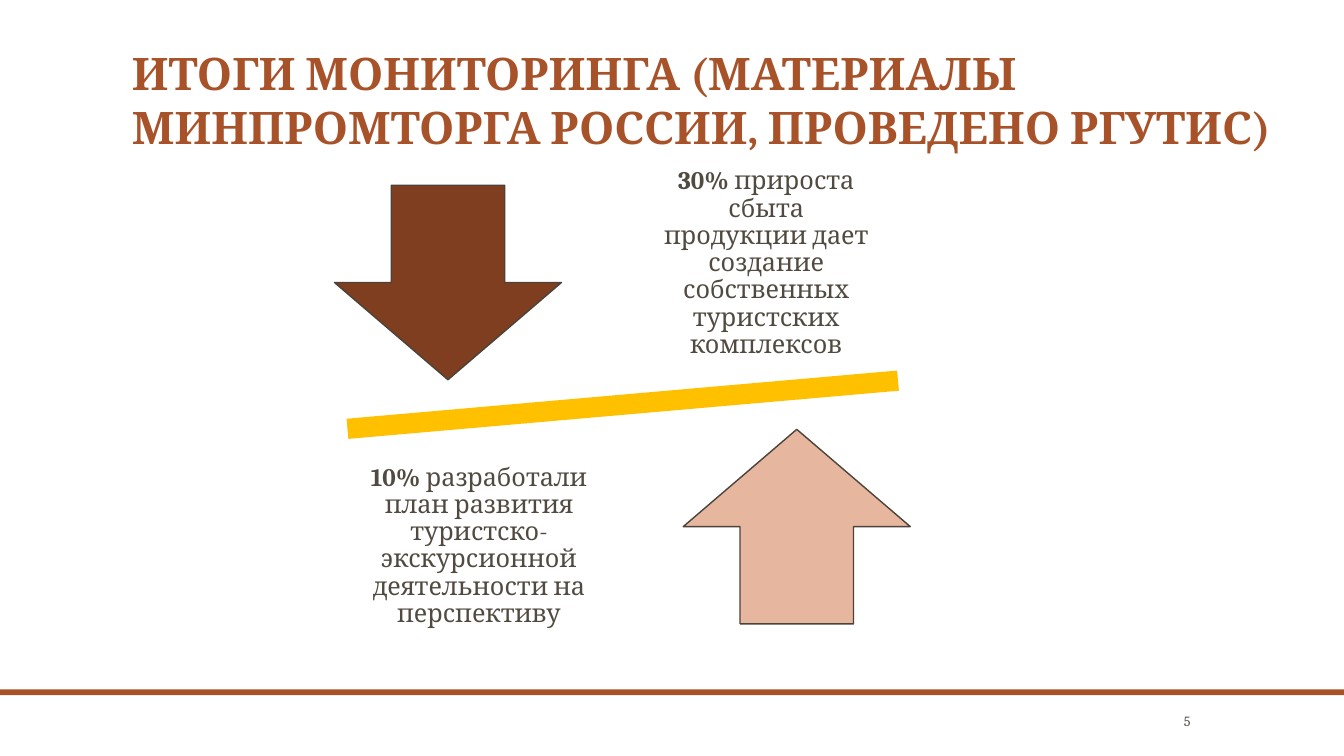
from dataclasses import dataclass

from pptx import Presentation
from pptx.dml.color import RGBColor
from pptx.enum.shapes import MSO_SHAPE as Preset
from pptx.enum.text import MSO_ANCHOR as Anchor
from pptx.enum.text import MSO_AUTO_SIZE as AutoSize
from pptx.enum.text import PP_ALIGN as Align
from pptx.slide import Slide
from pptx.text.text import _Paragraph as Paragraph
from pptx.util import Cm, Pt

FONT = "Cambria"
RUST = RGBColor(0xA8, 0x52, 0x29)
BROWN = RGBColor(0x7E, 0x3E, 0x1F)
PEACH = RGBColor(0xE7, 0xB6, 0x9E)
AMBER = RGBColor(0xFF, 0xC0, 0x00)
OUTLINE = RGBColor(0x4A, 0x43, 0x3A)
TEXT = RGBColor(0x51, 0x4A, 0x40)

SLIDE_WIDTH, SLIDE_HEIGHT = 33.87, 19.05
ARROW_WIDTH, ARROW_HEIGHT = 5.72, 4.9
LABEL_WIDTH, LABEL_HEIGHT = 6.1, 5.16


@dataclass(frozen=True)
class Figure:
    preset: Preset
    left: float
    top: float
    width: float
    height: float
    fill: RGBColor
    outlined: bool = False
    rotation: float = 0


@dataclass(frozen=True)
class Finding:
    left: float
    top: float
    share: str
    statement: str


FIGURES = [
    Figure(Preset.RECTANGLE, 0, 17.37, SLIDE_WIDTH, 0.15, RUST),
    Figure(Preset.MATH_MINUS, 6.22, 9.12, 18.95, 2.16, AMBER, rotation=-5),
    Figure(Preset.DOWN_ARROW, 8.43, 4.67, ARROW_WIDTH, ARROW_HEIGHT, BROWN, outlined=True),
    Figure(Preset.UP_ARROW, 17.22, 10.82, ARROW_WIDTH, ARROW_HEIGHT, PEACH, outlined=True),
]

FINDINGS = [
    Finding(16.26, 4.06, "30% ",
            "прироста сбыта продукции дает создание собственных туристских комплексов"),
    Finding(9.02, 11.18, "10% ",
            "разработали план развития туристско-экскурсионной деятельности на перспективу"),
]


def add_run(paragraph: Paragraph, text: str, size: float, color: RGBColor, bold: bool = False) -> None:
    run = paragraph.add_run()
    run.text = text
    run.font.name = FONT
    run.font.size = Pt(size)
    run.font.bold = bold
    run.font.color.rgb = color


def add_figure(slide: Slide, figure: Figure) -> None:
    shape = slide.shapes.add_shape(
        figure.preset, Cm(figure.left), Cm(figure.top), Cm(figure.width), Cm(figure.height))
    shape.shadow.inherit = False
    shape.rotation = figure.rotation
    shape.fill.solid()
    shape.fill.fore_color.rgb = figure.fill
    if figure.outlined:
        shape.line.color.rgb = OUTLINE
        shape.line.width = Pt(1)
    else:
        shape.line.fill.background()


def add_text_box(slide: Slide, left: float, top: float, width: float, height: float,
                 alignment: Align) -> Paragraph:
    frame = slide.shapes.add_textbox(Cm(left), Cm(top), Cm(width), Cm(height)).text_frame
    frame.word_wrap = True
    frame.vertical_anchor = Anchor.MIDDLE
    paragraph = frame.paragraphs[0]
    paragraph.alignment = alignment
    return paragraph


def add_finding(slide: Slide, finding: Finding) -> None:
    paragraph = add_text_box(
        slide, finding.left, finding.top, LABEL_WIDTH, LABEL_HEIGHT, Align.CENTER)
    paragraph.line_spacing = 0.9
    add_run(paragraph, finding.share, 18, TEXT, bold=True)
    add_run(paragraph, finding.statement, 18, TEXT)


def add_title(slide: Slide, text: str) -> None:
    title = slide.shapes.title
    title.left, title.top, title.width, title.height = Cm(3.07), Cm(1.02), Cm(29.85), Cm(3)
    frame = title.text_frame
    frame.auto_size = AutoSize.NONE
    frame.vertical_anchor = Anchor.TOP
    paragraph = frame.paragraphs[0]
    paragraph.alignment = Align.LEFT
    add_run(paragraph, text, 32, RUST, bold=True)


def main() -> None:
    presentation = Presentation()
    presentation.slide_width = Cm(SLIDE_WIDTH)
    presentation.slide_height = Cm(SLIDE_HEIGHT)
    slide = presentation.slides.add_slide(presentation.slide_layouts.get_by_name("Title Only"))

    # Title
    add_title(slide, "ИТОГИ МОНИТОРИНГА (МАТЕРИАЛЫ МИНПРОМТОРГА РОССИИ, ПРОВЕДЕНО РГУТИС)")

    # Footer rule, tilted beam and arrows
    for figure in FIGURES:
        add_figure(slide, figure)

    # Survey findings
    for finding in FINDINGS:
        add_finding(slide, finding)

    # Slide number
    add_run(add_text_box(slide, 28.32, 17.83, 1.93, 0.66, Align.RIGHT), "5", 10, TEXT)

    presentation.save("out.pptx")


if __name__ == "__main__":
    main()
